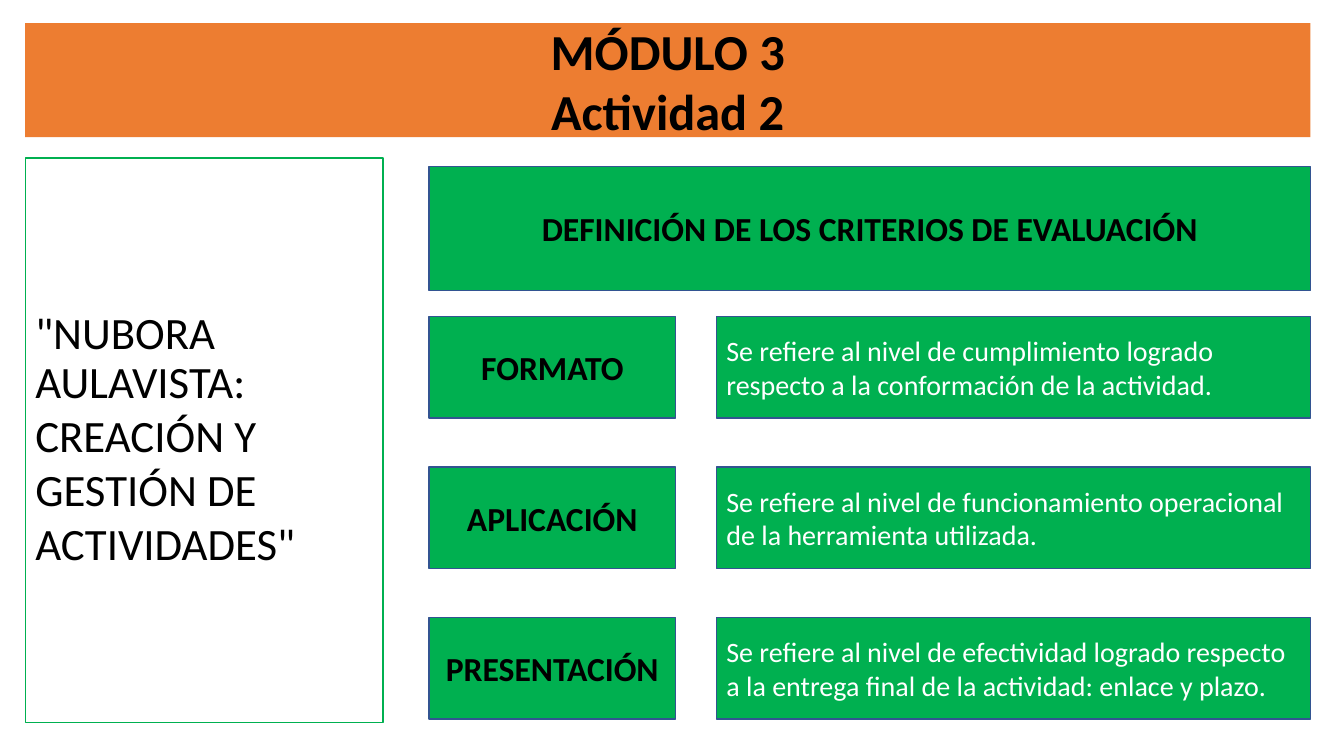
from typing import NamedTuple

from lxml import etree
from pptx import Presentation
from pptx.dml.color import RGBColor
from pptx.enum.shapes import MSO_SHAPE
from pptx.enum.text import MSO_ANCHOR, MSO_AUTO_SIZE, PP_ALIGN
from pptx.oxml.ns import qn
from pptx.util import Pt

RECTANGLE = MSO_SHAPE.RECTANGLE
MIDDLE = MSO_ANCHOR.MIDDLE
NO_AUTOFIT = MSO_AUTO_SIZE.NONE
LEFT, CENTER = PP_ALIGN.LEFT, PP_ALIGN.CENTER

ORANGE = RGBColor(0xED, 0x7D, 0x31)
GREEN = RGBColor(0x00, 0xB0, 0x50)
NAVY = RGBColor(0x32, 0x54, 0x91)
BLACK = RGBColor(0x00, 0x00, 0x00)
WHITE = RGBColor(0xFF, 0xFF, 0xFF)


class Box(NamedTuple):
    left: float
    top: float
    width: float
    height: float


class TextStyle(NamedTuple):
    size: int
    color: RGBColor
    bold: bool
    align: PP_ALIGN


class Criterion(NamedTuple):
    label: str
    description: str


MODULE_STYLE = TextStyle(36, BLACK, True, CENTER)
TOPIC_STYLE = TextStyle(32, BLACK, False, LEFT)
LABEL_STYLE = TextStyle(24, BLACK, True, CENTER)
DESCRIPTION_STYLE = TextStyle(20, WHITE, False, LEFT)

CRITERIA = [
    Criterion("FORMATO", "Se refiere al nivel de cumplimiento logrado respecto "
              "a la conformación de la actividad."),
    Criterion("APLICACIÓN", "Se refiere al nivel de funcionamiento operacional "
              "de la herramienta utilizada."),
    Criterion("PRESENTACIÓN", "Se refiere al nivel de efectividad logrado respecto "
              "a la entrega final de la actividad: enlace y plazo."),
]
HEADING_BOX = Box(306.5, 119, 629.5, 88.5)
LABEL_WIDTH = 176
DESCRIPTION_LEFT = 511.75
DESCRIPTION_WIDTH = 424.5
FIRST_ROW_TOP = 226
ROW_PITCH = 107.6
ROW_HEIGHT = 72.5


def place(shape, box: Box) -> None:
    for side, length in box._asdict().items():
        setattr(shape, side, Pt(length))


def write(shape, text: str, style: TextStyle) -> None:
    frame = shape.text_frame
    frame.text = text
    for name, value in {"word_wrap": True, "auto_size": NO_AUTOFIT,
                        "vertical_anchor": MIDDLE}.items():
        setattr(frame, name, value)
    font_format = {"name": "Calibri", "size": Pt(style.size), "bold": style.bold}
    for paragraph in frame.paragraphs:
        for name, value in {"alignment": style.align, "line_spacing": 1.0,
                            "space_before": Pt(0)}.items():
            setattr(paragraph, name, value)
        for run in paragraph.runs:
            for name, value in font_format.items():
                setattr(run.font, name, value)
            run.font.color.rgb = style.color


def remove_bullet(paragraph) -> None:
    properties = paragraph._p.get_or_add_pPr()
    properties.set("marL", "0")
    properties.set("indent", "0")
    etree.SubElement(properties, qn("a:buNone"))


def add_green_box(slide, box: Box, text: str, style: TextStyle) -> None:
    panel = slide.shapes.add_shape(RECTANGLE, *(Pt(length) for length in box))
    panel.shadow.inherit = False
    panel.fill.solid()
    panel.fill.fore_color.rgb = GREEN
    panel.line.color.rgb = NAVY
    panel.line.width = Pt(1)
    write(panel, text, style)


def main() -> None:
    deck = Presentation()
    deck.slide_width, deck.slide_height = Pt(960), Pt(540)
    slide = deck.slides.add_slide(deck.slide_layouts[1])

    module = slide.shapes.title
    place(module, Box(18, 16.5, 918, 81.5))
    module.fill.solid()
    module.fill.fore_color.rgb = ORANGE
    write(module, "MÓDULO 3\nActividad 2", MODULE_STYLE)

    topic = slide.placeholders[1]
    place(topic, Box(18, 113, 255.6, 403))
    topic.line.color.rgb = GREEN
    topic.line.width = Pt(1)
    write(topic, '"NUBORA AULAVISTA:\nCREACIÓN Y GESTIÓN DE ACTIVIDADES"', TOPIC_STYLE)
    topic.text_frame.paragraphs[0].line_spacing = 0.9
    for paragraph in topic.text_frame.paragraphs:
        remove_bullet(paragraph)

    add_green_box(slide, HEADING_BOX, "DEFINICIÓN DE LOS CRITERIOS DE EVALUACIÓN",
                  LABEL_STYLE)
    for row, criterion in enumerate(CRITERIA):
        top = FIRST_ROW_TOP + row * ROW_PITCH
        add_green_box(slide, Box(HEADING_BOX.left, top, LABEL_WIDTH, ROW_HEIGHT),
                      criterion.label, LABEL_STYLE)
        add_green_box(slide, Box(DESCRIPTION_LEFT, top, DESCRIPTION_WIDTH, ROW_HEIGHT),
                      criterion.description, DESCRIPTION_STYLE)

    deck.save("out.pptx")


if __name__ == "__main__":
    main()
